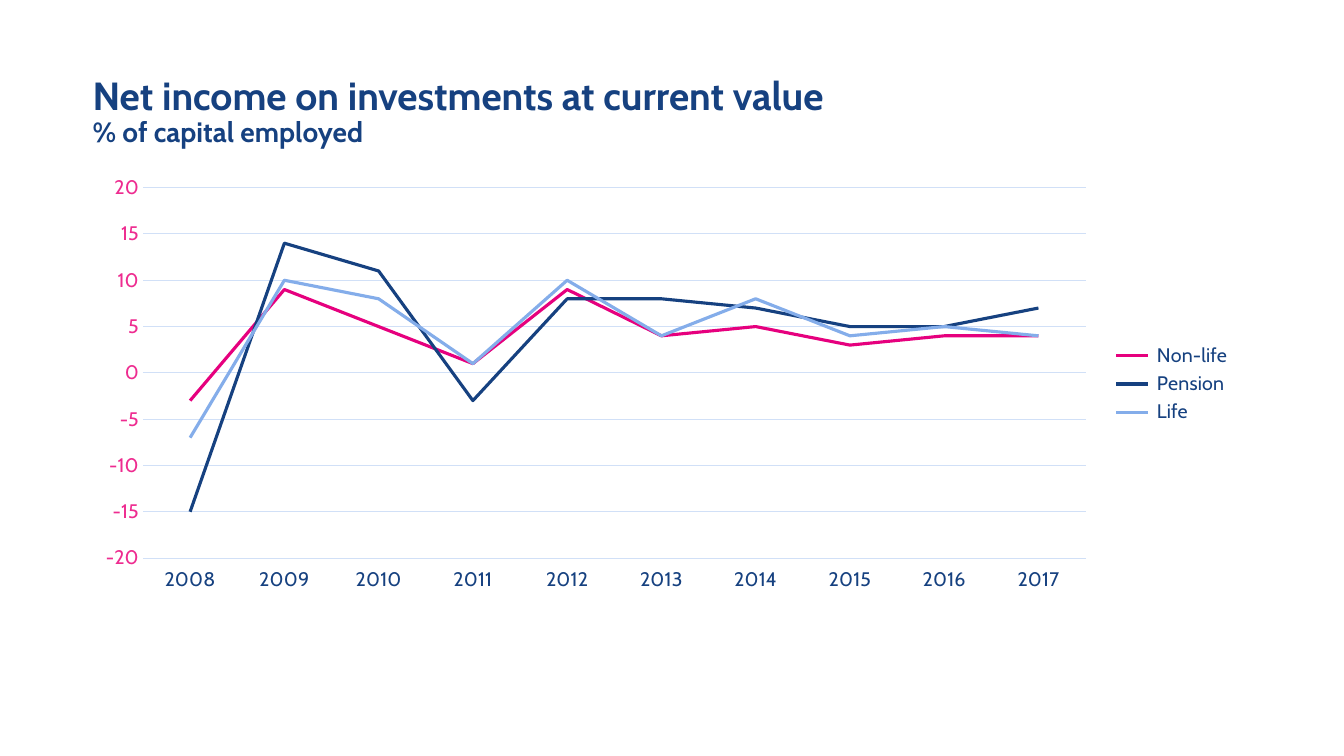
from lxml import etree
from pptx import Presentation
from pptx import util as u
from pptx.chart.data import CategoryChartData
from pptx.dml.color import RGBColor
from pptx.enum import chart as charts, text
from pptx.oxml.ns import qn

COLORS = {"navy": "164180", "pink": "EE2C90", "magenta": "E6007E",
          "sky": "84ADEA", "grid": "D1E0F7"}
FONT = "Cabin"
YEARS = [str(year) for year in range(2008, 2018)]
RETURNS = [
    (" Non-life", "magenta", (-3, 9, 5, 1, 9, 4, 5, 3, 4, 4)),
    (" Pension", "navy", (-15, 14, 11, -3, 8, 8, 7, 5, 5, 7)),
    (" Life", "sky", (-7, 10, 8, 1, 10, 4, 8, 4, 5, 4)),
]
PLOT_SHARES = {"x": 0.052, "y": 0.047, "w": 0.813, "h": 0.855}


def rgb(name):
    return RGBColor.from_string(COLORS[name])


def style_font(font, size, color="navy", bold=False):
    font.name = FONT
    font.size = u.Pt(size)
    font.bold = bold
    font.color.rgb = rgb(color)


def add_text(paragraph, words, **style):
    run = paragraph.add_run()
    run.text = words
    style_font(run.font, **style)


def style_line(line, color, width):
    line.color.rgb = rgb(color)
    line.width = u.Pt(width)


def add_heading(slide, box):
    frame = slide.shapes.add_textbox(*box).text_frame
    frame.word_wrap = True
    frame.vertical_anchor = text.MSO_ANCHOR.MIDDLE
    heading = frame.paragraphs[0]
    heading.line_spacing = 0.9
    add_text(heading, "Net income on investments at current value", size=28, bold=True)
    heading.add_line_break()
    add_text(heading, "% of capital employed", size=20, bold=True)


def fix_plot_area(chart):
    plot_area = chart._chartSpace.chart.plotArea
    for old in plot_area.findall(qn("c:layout")):
        plot_area.remove(old)
    layout = etree.Element(qn("c:layout"))
    manual = etree.SubElement(layout, qn("c:manualLayout"))
    settings = {"layoutTarget": "inner", "xMode": "edge", "yMode": "edge", **PLOT_SHARES}
    for tag, value in settings.items():
        etree.SubElement(manual, qn(f"c:{tag}")).set("val", str(value))
    plot_area.insert(0, layout)


def style_axes(chart):
    years, percent = chart.category_axis, chart.value_axis
    for axis, color in ((years, "navy"), (percent, "pink")):
        axis.major_tick_mark = axis.minor_tick_mark = charts.XL_TICK_MARK.NONE
        style_font(axis.tick_labels.font, 14, color)
    years.tick_label_position = charts.XL_TICK_LABEL_POSITION.LOW
    style_line(years.format.line, "grid", 0.75)
    percent.minimum_scale, percent.maximum_scale, percent.major_unit = -20, 20, 5
    percent.format.line.fill.background()
    percent.has_major_gridlines = True
    style_line(percent.major_gridlines.format.line, "grid", 0.75)


def add_returns_chart(slide, box):
    data = CategoryChartData(number_format="General")
    data.categories = YEARS
    for name, _, values in RETURNS:
        data.add_series(name, values)
    chart = slide.shapes.add_chart(charts.XL_CHART_TYPE.LINE, *box, data).chart
    chart.has_title = False
    style_font(chart.font, 14)
    chart.plots[0].vary_by_categories = False
    for series, (_, color, _) in zip(chart.plots[0].series, RETURNS):
        series.smooth = False
        series.marker.style = charts.XL_MARKER_STYLE.NONE
        style_line(series.format.line, color, 2.25)
    style_axes(chart)
    chart.has_legend = True
    chart.legend.position = charts.XL_LEGEND_POSITION.RIGHT
    chart.legend.include_in_layout = False
    style_font(chart.legend.font, 14)
    fix_plot_area(chart)


def main():
    deck = Presentation()
    deck.slide_width, deck.slide_height = u.Inches(13.33), u.Inches(7.5)
    slide = deck.slides.add_slide(deck.slide_layouts[6])
    left, width = u.Inches(0.82), u.Inches(11.5)
    add_heading(slide, (left, u.Inches(0.39), width, u.Inches(1.45)))
    add_returns_chart(slide, (left, u.Inches(1.66), width, u.Inches(4.3)))
    deck.save("out.pptx")


if __name__ == "__main__":
    main()
